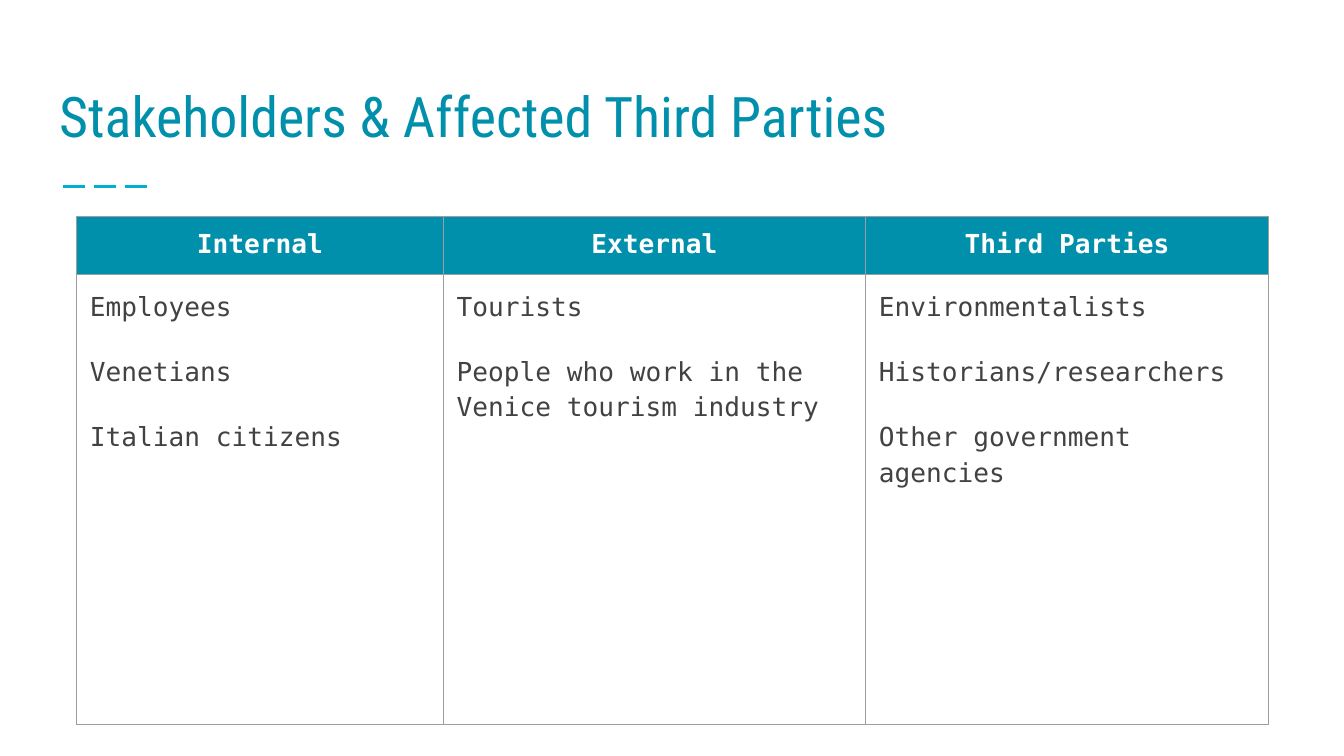
from lxml import etree
from pptx import Presentation
from pptx.dml.color import RGBColor
from pptx.enum.dml import MSO_LINE
from pptx.enum.shapes import MSO_CONNECTOR
from pptx.enum.text import MSO_ANCHOR, PP_ALIGN
from pptx.oxml.ns import qn
from pptx.util import Cm, Pt

TEAL = RGBColor(0x00, 0x90, 0xAC)
CYAN = RGBColor(0x01, 0xAF, 0xD1)
DARK = RGBColor(0x42, 0x42, 0x42)
GREY = RGBColor(0x9E, 0x9E, 0x9E)
WHITE = RGBColor(0xFF, 0xFF, 0xFF)

STRAIGHT = MSO_CONNECTOR.STRAIGHT
DASH = MSO_LINE.LONG_DASH
BOTTOM, TOP = MSO_ANCHOR.BOTTOM, MSO_ANCHOR.TOP
LEFT, CENTER = PP_ALIGN.LEFT, PP_ALIGN.CENTER

GROUPS = {
    "Internal": ["Employees", "Venetians", "Italian citizens"],
    "External": ["Tourists", "People who work in the Venice tourism industry"],
    "Third Parties": ["Environmentalists", "Historians/researchers",
                      "Other government agencies"],
}
WIDTHS = [6.93, 7.98, 7.62]
HEIGHTS = [1.08, 8.51]


class Deck:
    head_font = "Roboto Condensed"
    body_font = "DejaVu Sans Mono"
    inset = Cm(0.25)

    def __init__(self, slide):
        self.slide = slide

    def run(self, para, text, font, size, color, bold=False):
        run = para.add_run()
        run.text = text
        run.font.name = font
        run.font.size = Pt(size)
        run.font.bold = bold
        run.font.color.rgb = color

    def pad(self, box):
        box.margin_left = box.margin_right = self.inset
        box.margin_top = box.margin_bottom = self.inset

    def title(self, text, x, y, w, h):
        box = self.slide.shapes.add_textbox(Cm(x), Cm(y), Cm(w), Cm(h))
        frame = box.text_frame
        frame.word_wrap = True
        frame.vertical_anchor = BOTTOM
        self.pad(frame)
        self.run(frame.paragraphs[0], text, self.head_font, 30, TEAL)

    def rule(self, x, y, w):
        line = self.slide.shapes.add_connector(
            STRAIGHT, Cm(x), Cm(y), Cm(x + w), Cm(y))
        line.line.color.rgb = CYAN
        line.line.width = Pt(1.5)
        line.line.dash_style = DASH
        etree.SubElement(line._element.spPr, qn("a:effectLst"))

    def border(self, cell):
        props = cell._tc.get_or_add_tcPr()
        for side in ("lnL", "lnR", "lnT", "lnB"):
            edge = etree.SubElement(props, qn(f"a:{side}"), w=str(Pt(0.75)))
            fill = etree.SubElement(edge, qn("a:solidFill"))
            etree.SubElement(fill, qn("a:srgbClr"), val=str(GREY))

    def cell(self, cell, lines, color, align=LEFT, bold=False, fill=None,
             space=1.0):
        self.pad(cell)
        cell.vertical_anchor = TOP
        self.border(cell)
        if fill is None:
            cell.fill.background()
        else:
            cell.fill.solid()
            cell.fill.fore_color.rgb = fill
        frame = cell.text_frame
        for i, text in enumerate(lines):
            para = frame.add_paragraph() if i else frame.paragraphs[0]
            para.alignment = align
            para.line_spacing = space
            if i:
                para.space_before = Pt(16)
            self.run(para, text, self.body_font, 14, color, bold)

    def table(self, groups, x, y, widths, heights):
        grid = self.slide.shapes.add_table(
            len(heights), len(widths), Cm(x), Cm(y),
            Cm(sum(widths)), Cm(sum(heights))).table
        grid.first_row = grid.horz_banding = False
        for col, width in zip(grid.columns, widths):
            col.width = Cm(width)
        for row, height in zip(grid.rows, heights):
            row.height = Cm(height)
        for i, (name, people) in enumerate(groups.items()):
            self.cell(grid.cell(0, i), [name], WHITE, CENTER, True, TEAL)
            self.cell(grid.cell(1, i), people, DARK, space=1.15)


def main():
    show = Presentation()
    show.slide_width, show.slide_height = Cm(25.4), Cm(14.29)
    deck = Deck(show.slides.add_slide(show.slide_layouts[6]))

    # Heading with dashed rule
    deck.rule(1.19, 3.53, 1.7)
    deck.title("Stakeholders & Affected Third Parties", 0.87, 1.04, 23.67, 2.03)

    # Stakeholder groups
    deck.table(GROUPS, 1.45, 4.09, WIDTHS, HEIGHTS)

    show.save("out.pptx")


if __name__ == "__main__":
    main()
